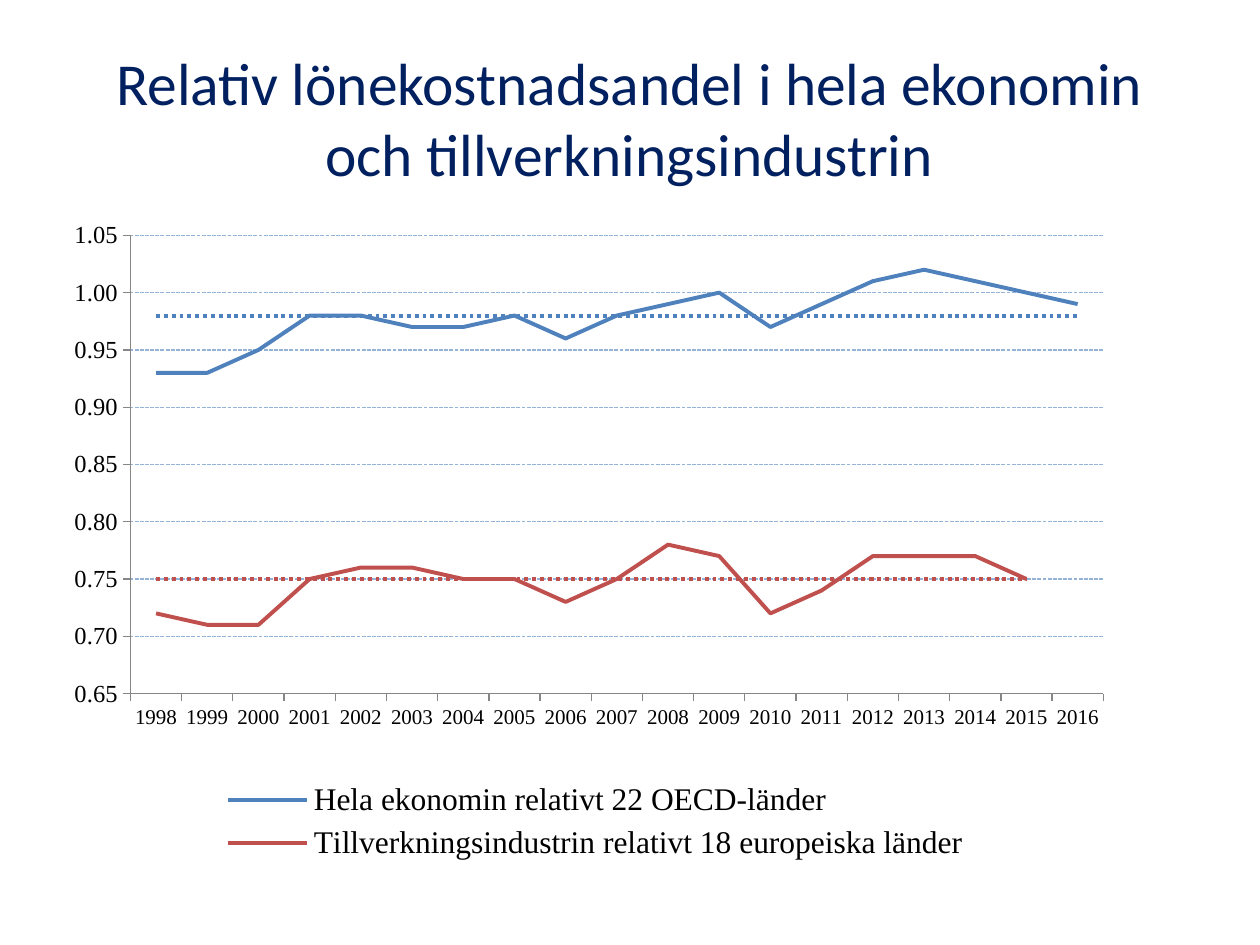
from dataclasses import dataclass

from lxml.etree import SubElement
from pptx import Presentation
from pptx.chart.chart import Chart
from pptx.chart.data import CategoryChartData as ChartData
from pptx.dml.color import RGBColor as Rgb
from pptx.enum.chart import XL_CHART_TYPE as Kind
from pptx.enum.chart import XL_LEGEND_POSITION as Spot
from pptx.enum.chart import XL_TICK_LABEL_POSITION as Label
from pptx.enum.chart import XL_TICK_MARK as Tick
from pptx.enum.dml import MSO_LINE as Dash
from pptx.enum.text import MSO_ANCHOR as Anchor
from pptx.enum.text import PP_ALIGN as Align
from pptx.oxml.ns import qn
from pptx.util import Emu, Pt

SCALE = 914400 / 126
COLORS = {
    "title": "002060", "text": "000000", "axis": "868686",
    "grid": "95B3D7", "total": "4F81BD", "industry": "C0504D",
}
SERIF = "Times New Roman"
YEARS = range(1998, 2017)


@dataclass
class Line:
    name: str
    vals: list
    color: str
    mean: bool = False


LINES = [
    Line("Hela ekonomin relativt 22 OECD-länder",
         [0.93, 0.93, 0.95, 0.98, 0.98, 0.97, 0.97, 0.98, 0.96, 0.98,
          0.99, 1, 0.97, 0.99, 1.01, 1.02, 1.01, 1, 0.99], "total"),
    Line("Series 2", [0.98] * 19, "total", True),
    Line("Tillverkningsindustrin relativt 18 europeiska länder",
         [0.72, 0.71, 0.71, 0.75, 0.76, 0.76, 0.75, 0.75, 0.73, 0.75,
          0.78, 0.77, 0.72, 0.74, 0.77, 0.77, 0.77, 0.75, None], "industry"),
    Line("Series 4", [0.75] * 18 + [None], "industry", True),
]


def px(num: int) -> Emu:
    return Emu(round(num * SCALE))


def box(*nums: int) -> list[Emu]:
    return [px(num) for num in nums]


def style(font, size: int, color: str = "text", face: str = SERIF) -> None:
    font.size, font.name, font.bold = Pt(size), face, False
    font.color.rgb = Rgb.from_string(COLORS[color])


def write(shape, text: str, *, size: int, color: str, face: str) -> None:
    frame = shape.text_frame
    frame.word_wrap = True
    frame.vertical_anchor = Anchor.MIDDLE
    para = frame.paragraphs[0]
    para.alignment = Align.CENTER
    run = para.add_run()
    run.text = text
    style(run.font, size, color, face)


def stroke(line, color: str, width: float, dash=None) -> None:
    line.color.rgb = Rgb.from_string(COLORS[color])
    line.width = Pt(width)
    if dash:
        line.dash_style = dash


def place(part, index: int, inner: bool, *rect: float) -> None:
    """Fix the place of a chart part, in fractions of the chart."""
    for old in part.findall(qn("c:layout")):
        part.remove(old)
    layout = SubElement(part, qn("c:layout"))
    part.insert(index, layout)
    manual = SubElement(layout, qn("c:manualLayout"))
    pairs = [("layoutTarget", "inner")] if inner else []
    pairs += [("xMode", "edge"), ("yMode", "edge")]
    pairs += zip("xywh", map(str, rect))
    for tag, val in pairs:
        SubElement(manual, qn(f"c:{tag}")).set("val", val)


def set_axes(chart: Chart) -> None:
    for axis, size in ((chart.category_axis, 12), (chart.value_axis, 14)):
        style(axis.tick_labels.font, size)
        axis.major_tick_mark, axis.minor_tick_mark = Tick.OUTSIDE, Tick.NONE
        axis.tick_label_position = Label.LOW
        stroke(axis.format.line, "axis", 0.75)
    axis = chart.value_axis
    axis.minimum_scale, axis.maximum_scale, axis.major_unit = 0.65, 1.05, 0.05
    axis.tick_labels.number_format = "#,##0.00"
    axis.tick_labels.number_format_is_linked = False
    axis.has_major_gridlines = True
    stroke(axis.major_gridlines.format.line, "grid", 0.75, Dash.SQUARE_DOT)


def set_legend(chart: Chart) -> None:
    """Show the legend without the mean lines."""
    chart.has_legend = True
    legend = chart.legend
    legend.position, legend.include_in_layout = Spot.BOTTOM, False
    style(legend.font, 18)
    root = legend._element
    hidden = [num for num, line in enumerate(LINES) if line.mean]
    for spot, num in enumerate(hidden, 1):
        entry = SubElement(root, qn("c:legendEntry"))
        SubElement(entry, qn("c:idx")).set("val", str(num))
        SubElement(entry, qn("c:delete")).set("val", "1")
        root.insert(spot, entry)
    place(root, len(hidden) + 1, False, 0.16, 0.86, 0.7, 0.14)


def add_lines(slide) -> None:
    data = ChartData(number_format="0.00")
    data.categories = [str(year) for year in YEARS]
    for line in LINES:
        data.add_series(line.name, line.vals)
    frame = slide.shapes.add_chart(
        Kind.LINE, *box(44, 195, 1081, 674), data)
    chart = frame.chart
    chart.has_title = False
    style(chart.font, 14)
    plot = chart.plots[0]
    plot.vary_by_categories = False
    for line, series in zip(LINES, plot.series):
        series.smooth = False
        dash = Dash.ROUND_DOT if line.mean else None
        stroke(series.format.line, line.color, 2.25, dash)
    set_axes(chart)
    set_legend(chart)
    area = chart._chartSpace.chart.plotArea
    place(area, 0, True, 0.08, 0.06, 0.9, 0.68)


def main() -> None:
    deck = Presentation()
    deck.slide_width, deck.slide_height = box(1260, 945)
    slide = deck.slides.add_slide(deck.slide_layouts[5])
    title = slide.shapes.title
    title.left, title.top, title.width, title.height = box(63, 38, 1133, 158)
    write(title, "Relativ lönekostnadsandel i hela ekonomin och "
          "tillverkningsindustrin", size=34, color="title", face="Calibri")
    add_lines(slide)
    deck.save("out.pptx")


if __name__ == "__main__":
    main()
